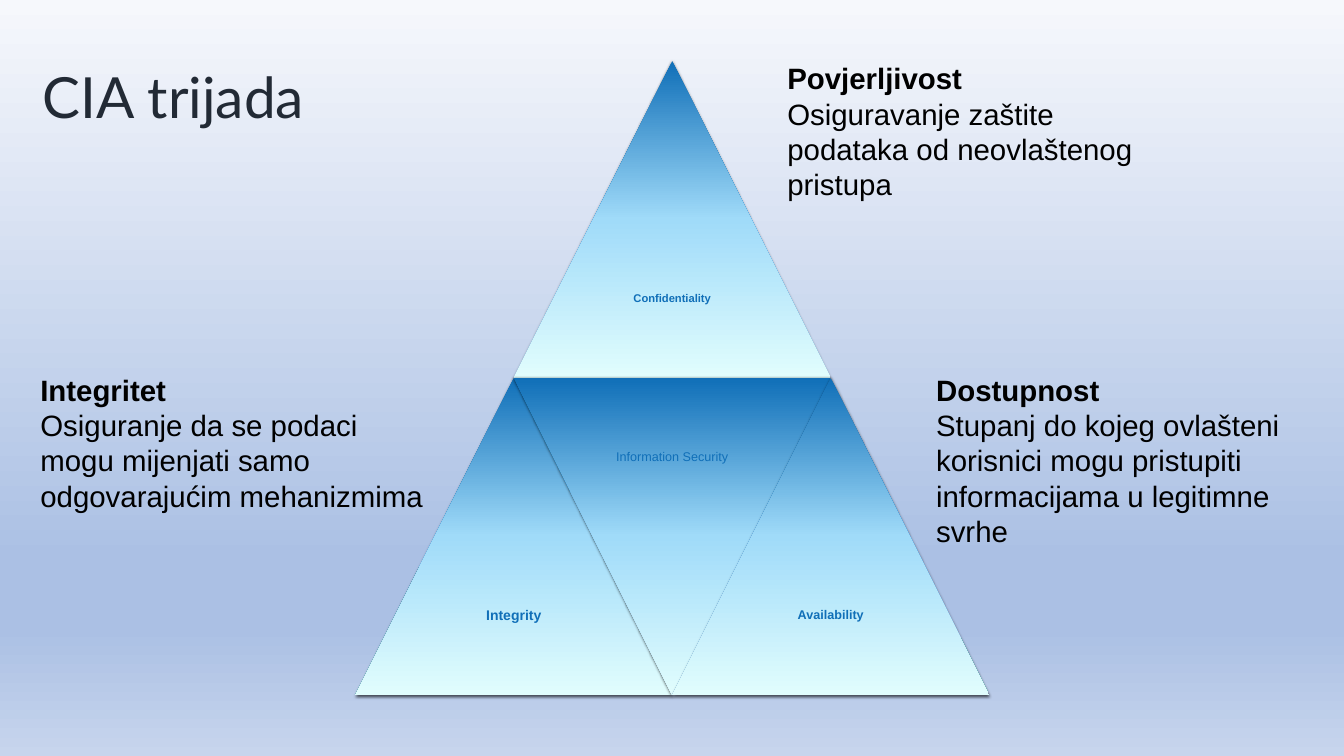
from lxml.etree import SubElement
from pptx import Presentation
from pptx.dml.color import RGBColor
from pptx.enum.shapes import MSO_SHAPE as Shape
from pptx.enum.text import MSO_ANCHOR as Anchor, MSO_AUTO_SIZE as AutoSize, PP_ALIGN as Align
from pptx.oxml.ns import qn
from pptx.util import Inches, Pt

COLORS = {
    "ink": "000000", "title": "222A35", "label": "106FB8",
    "deep": "106FB8", "sky": "A0DBF9", "ice": "E1FDFD",
    "mist": "F6F8FC", "haze": "ABC0E4", "dawn": "C7D5ED",
}
BACKDROP = [(0, "mist"), (74, "haze"), (83, "haze"), (100, "dawn")]
PYRAMID_FADE = [(0, "deep"), (50, "sky"), (100, "ice")]


class TriadSlide:
    """Slide and style; lengths are in a grid of 100 columns by 100 rows."""

    def __init__(self, deck):
        self.col, self.row = deck.slide_width / 100, deck.slide_height / 100
        self.slide = deck.slides.add_slide(deck.slide_layouts[6])
        self.shapes = self.slide.shapes

    def place(self, left, top, width, height):
        return [round(v) for v in (left * self.col, top * self.row,
                                   width * self.col, height * self.row)]

    def fade(self, fill, owner, stops):
        """Vertical gradient that stays upright when its shape turns."""
        fill.gradient()
        fill.gradient_angle = 270
        gradient = next(owner.iter(qn("a:gradFill")))
        gradient.set("rotWithShape", "0")
        stop_list = gradient.find(qn("a:gsLst"))
        for old_stop in list(stop_list):
            stop_list.remove(old_stop)
        for percent, color in stops:
            stop = SubElement(stop_list, qn("a:gs"), pos=str(percent * 1000))
            SubElement(stop, qn("a:srgbClr"), val=COLORS[color])

    def backdrop(self, stops):
        self.fade(self.slide.background.fill, self.slide.element, stops)

    def triangle(self, box, turn=0):
        piece = self.shapes.add_shape(Shape.ISOSCELES_TRIANGLE, *self.place(*box))
        piece.rotation = turn
        self.fade(piece.fill, piece.element, PYRAMID_FADE)
        piece.line.fill.background()
        piece.shadow.inherit = False
        effects = next(piece.element.iter(qn("a:effectLst")))
        shadow = SubElement(effects, qn("a:outerShdw"), blurRad=str(Pt(4.5)),
                            dist=str(Pt(1.5)), dir="5400000", rotWithShape="0")
        shade = SubElement(shadow, qn("a:srgbClr"), val=COLORS["ink"])
        SubElement(shade, qn("a:alpha"), val="63000")

    def text(self, box, lines, size, color, font="Arial", anchor=Anchor.TOP,
             align=Align.LEFT, spacing=1.0, insets=(0.1, 0.05), grow=False):
        """Lines are (wording, bold) pairs, one paragraph each."""
        frame = self.shapes.add_textbox(*self.place(*box)).text_frame
        frame.word_wrap = True
        frame.auto_size = AutoSize.SHAPE_TO_FIT_TEXT if grow else AutoSize.NONE
        frame.vertical_anchor = anchor
        frame.margin_left = frame.margin_right = Inches(insets[0])
        frame.margin_top = frame.margin_bottom = Inches(insets[1])
        for number, (wording, bold) in enumerate(lines):
            paragraph = frame.add_paragraph() if number else frame.paragraphs[0]
            paragraph.alignment, paragraph.line_spacing = align, spacing
            run = paragraph.add_run()
            run.text = wording
            run.font.name, run.font.size, run.font.bold = font, Pt(size), bold
            run.font.color.rgb = RGBColor.from_string(COLORS[color])

    def label(self, box, wording, size, bold):
        self.text(box, [(wording, bold)], size, "label", anchor=Anchor.MIDDLE,
                  align=Align.CENTER, spacing=0.9, insets=(0.07, 0.07))

    def definition(self, box, term, meaning):
        self.text(box, [(term, True), (meaning, False)], 42, "ink", grow=True)


def main():
    deck = Presentation()
    deck.slide_width, deck.slide_height = Inches(26.66), Inches(15)
    triad = TriadSlide(deck)
    triad.backdrop(BACKDROP)

    # Pyramid: four triangles on half-side steps
    left, top, half_w, half_h = 26.44, 8.07, 11.79, 20.97
    pyramid = [  # step across, step down, turn, label, size, bold
        (1, 0, 0, "Confidentiality", 16, True),
        (0, 2, 0, "Integrity", 20, True),
        (1, 2, 180, "Information Security", 18, False),
        (2, 2, 0, "Availability", 18, True),
    ]
    for across, down, turn, wording, size, bold in pyramid:
        x, y = left + across * half_w, top + down * half_h
        triad.triangle((x, y, 2 * half_w, 2 * half_h), turn)
        label_y = y if turn else y + half_h
        triad.label((x + half_w / 2, label_y, half_w, half_h), wording, size, bold)

    # Definitions around the pyramid
    triad.definition((58.21, 7.67, 27.08, 14.8), "Povjerljivost",
                     "Osiguravanje zaštite podataka od neovlaštenog pristupa")
    triad.definition((2.63, 48.87, 29.97, 14.8), "Integritet",
                     "Osiguranje da se podaci mogu mijenjati samo "
                     "odgovarajućim mehanizmima")
    triad.definition((69.28, 48.87, 29.56, 14.8), "Dostupnost",
                     "Stupanj do kojeg ovlašteni korisnici mogu pristupiti "
                     "informacijama u legitimne svrhe")

    # Title
    triad.text((2.63, 6.8, 41.67, 10.93), [("CIA trijada", False)], 81, "title",
               font="Lato", anchor=Anchor.BOTTOM, spacing=0.9, insets=(0.15, 0.07))

    deck.save("out.pptx")


if __name__ == "__main__":
    main()
